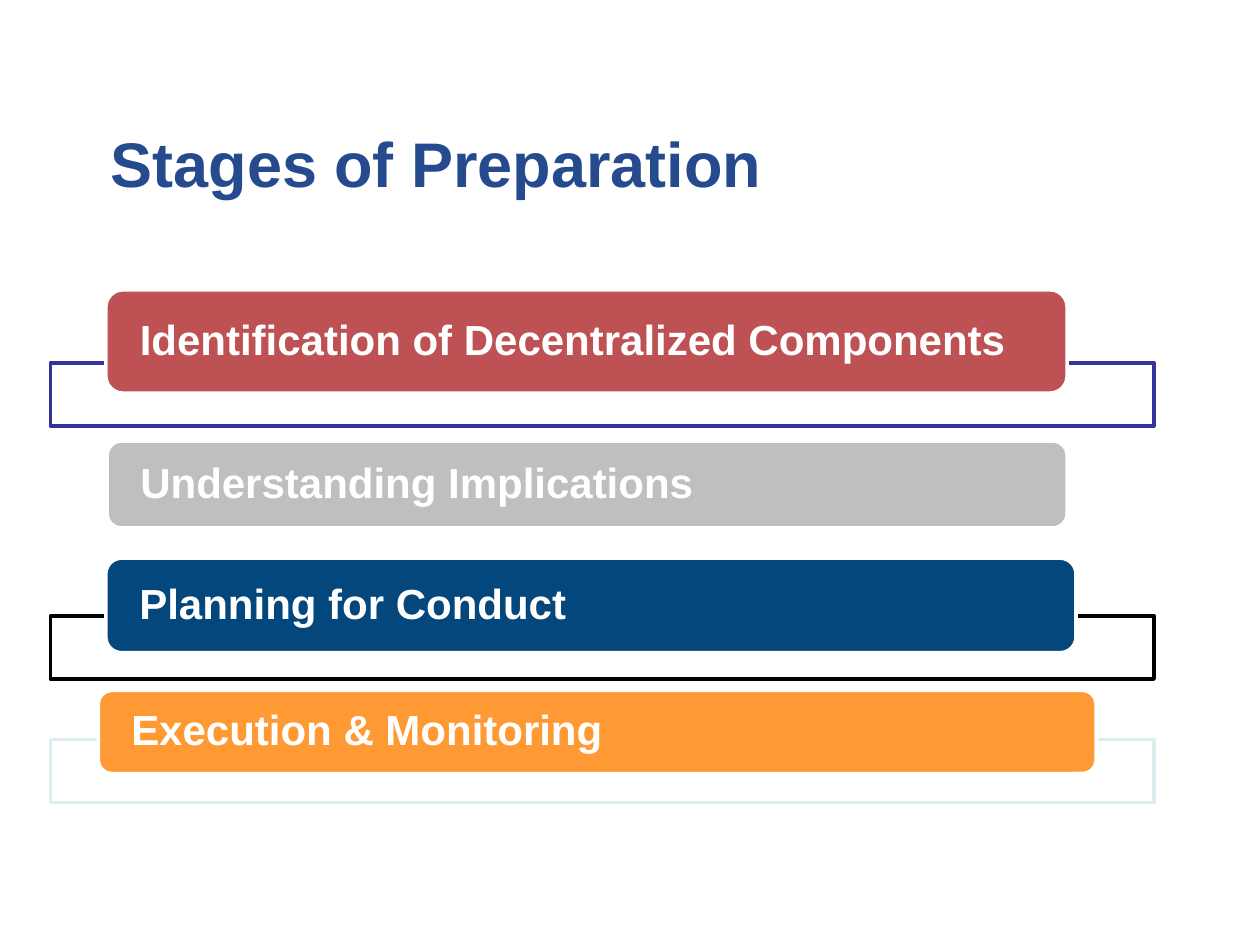
from lxml import etree
from pptx import Presentation
from pptx.dml.color import RGBColor
from pptx.enum.shapes import MSO_SHAPE
from pptx.enum.text import MSO_ANCHOR, PP_ALIGN
from pptx.oxml.ns import qn
from pptx.util import Inches, Pt

RECTANGLE, ROUNDED = MSO_SHAPE.RECTANGLE, MSO_SHAPE.ROUNDED_RECTANGLE
MIDDLE, LEFT = MSO_ANCHOR.MIDDLE, PP_ALIGN.LEFT

WHITE = RGBColor(0xFF, 0xFF, 0xFF)
BLACK = RGBColor(0x00, 0x00, 0x00)
TITLE_BLUE = RGBColor(0x25, 0x4B, 0x8E)
INDIGO = RGBColor(0x33, 0x33, 0x99)
PALE_TEAL = RGBColor(0xDA, 0xED, 0xEF)
RED = RGBColor(0xBD, 0x51, 0x54)
GREY = RGBColor(0xBF, 0xBF, 0xBF)
NAVY = RGBColor(0x04, 0x47, 0x7C)
ORANGE = RGBColor(0xFF, 0x99, 0x33)

TITLE = "Stages of Preparation"
TITLE_AREA = (0.78, 0.89, 8.26, 0.8)
TITLE_FONT = {"name": "Arial", "size": Pt(36), "bold": True}
LABEL_FONT = {"name": "Arial", "size": Pt(24), "bold": True}

# label, bar colour, bar area (left, top, width, height), frame top, frame colour
STAGES = [
    ("Identification of Decentralized Components", RED, (0.84, 2.3, 7.63, 0.82), 2.88, INDIGO),
    ("Understanding Implications", GREY, (0.85, 3.5, 7.62, 0.69), 3.83, WHITE),
    ("Planning for Conduct", NAVY, (0.84, 4.43, 7.7, 0.75), 4.89, BLACK),
    ("Execution & Monitoring", ORANGE, (0.78, 5.48, 7.92, 0.66), 5.87, PALE_TEAL),
]
FRAME_LEFT, FRAME_WIDTH, FRAME_HEIGHT = 0.4, 8.76, 0.5
FRAME_OPACITY = 90
LABEL_INSET = 0.23


def inches(area):
    return [Inches(value) for value in area]


def write(frame, text, font_values, color):
    """Put one left-aligned, vertically centred line into a text frame."""
    frame.word_wrap = True
    frame.vertical_anchor = MIDDLE
    paragraph = frame.paragraphs[0]
    paragraph.alignment = LEFT
    run = paragraph.add_run()
    run.text = text
    for key, value in font_values.items():
        setattr(run.font, key, value)
    run.font.color.rgb = color
    return paragraph


def add_box(slide, preset, area, fill, outline):
    box = slide.shapes.add_shape(preset, *inches(area))
    box.shadow.inherit = False
    box.fill.solid()
    box.fill.fore_color.rgb = fill
    box.line.color.rgb = outline
    box.line.width = Pt(2)
    return box


def set_opacity(box, percent):
    color = box.fill._xPr.find(qn("a:solidFill"))[0]
    etree.SubElement(color, qn("a:alpha")).set("val", str(percent * 1000))


def add_stage(slide, label, bar_color, bar_area, frame_top, frame_color):
    frame_area = (FRAME_LEFT, frame_top, FRAME_WIDTH, FRAME_HEIGHT)
    frame = add_box(slide, RECTANGLE, frame_area, WHITE, frame_color)
    set_opacity(frame, FRAME_OPACITY)

    bar = add_box(slide, ROUNDED, bar_area, bar_color, WHITE)
    text = bar.text_frame
    text.margin_left = text.margin_right = Inches(LABEL_INSET)
    text.margin_top = text.margin_bottom = 0
    write(text, label, LABEL_FONT, WHITE).line_spacing = 0.9


def main():
    deck = Presentation()
    deck.slide_width, deck.slide_height = Inches(10), Inches(7.5)
    slide = deck.slides.add_slide(deck.slide_layouts[6])
    title = slide.shapes.add_textbox(*inches(TITLE_AREA))
    write(title.text_frame, TITLE, TITLE_FONT, TITLE_BLUE)
    for stage in STAGES:
        add_stage(slide, *stage)
    deck.save("out.pptx")


if __name__ == "__main__":
    main()
